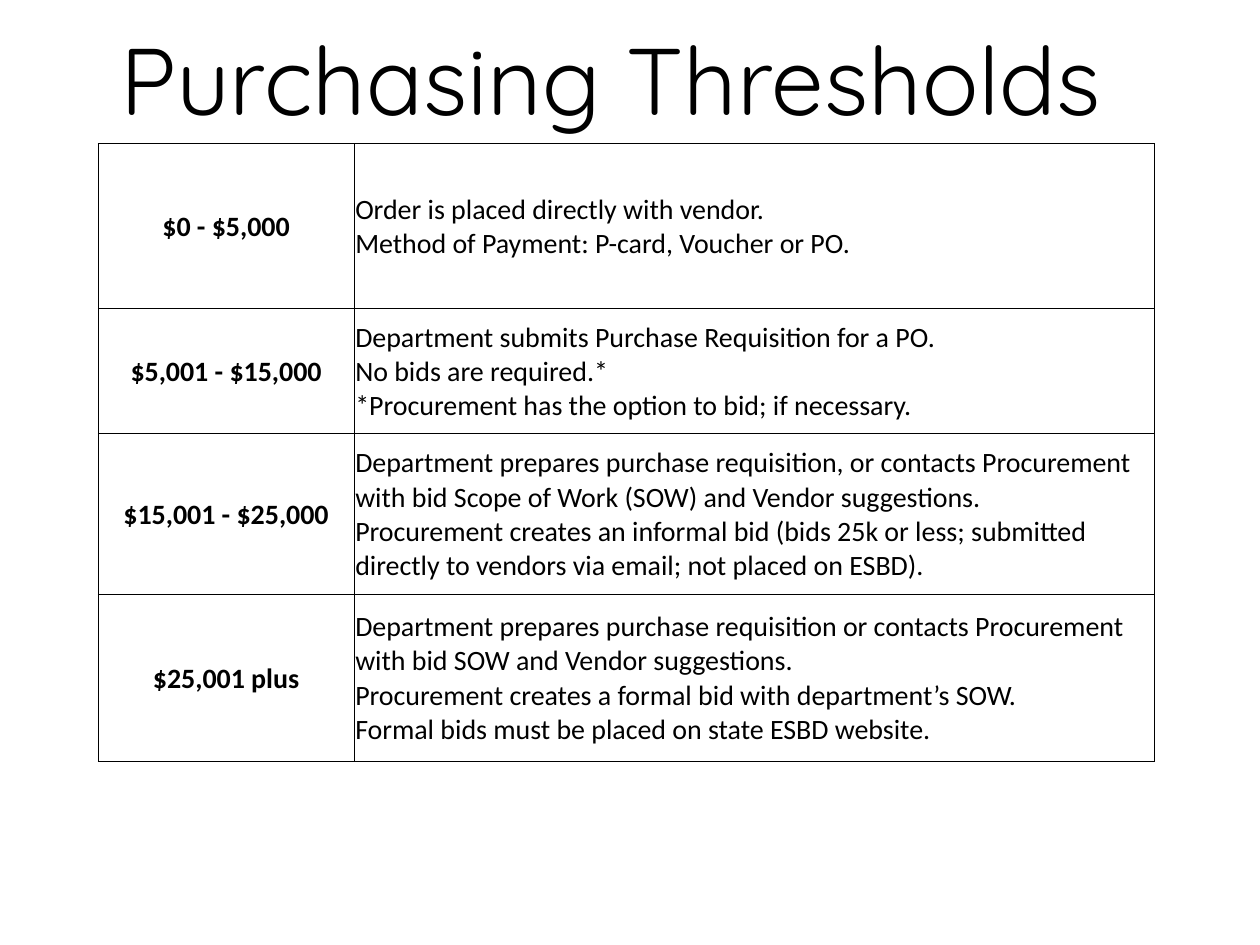
import pptx
import pptx.dml.color
import pptx.enum.text
import pptx.util
from lxml import etree
from pptx.oxml.ns import qn

Inches, Pt = pptx.util.Inches, pptx.util.Pt
PP_ALIGN, ANCHOR = pptx.enum.text.PP_ALIGN, pptx.enum.text.MSO_ANCHOR

# Content: purchase amount, then the steps that apply to it
TITLE = "Purchasing Thresholds"
THRESHOLDS = [
    ("$0 - $5,000", [
        "Order is placed directly with vendor.",
        "Method of Payment: P-card, Voucher or PO.",
    ]),
    ("$5,001 - $15,000", [
        "Department submits Purchase Requisition for a PO.",
        "No bids are required.*",
        "*Procurement has the option to bid; if necessary.",
    ]),
    ("$15,001 - $25,000", [
        "Department prepares purchase requisition, or contacts Procurement "
        "with bid Scope of Work (SOW) and Vendor suggestions.",
        "Procurement creates an informal bid (bids 25k or less; submitted "
        "directly to vendors via email; not placed on ESBD).",
    ]),
    ("$25,001 plus", [
        "Department prepares purchase requisition or contacts Procurement "
        "with bid SOW and Vendor suggestions.",
        "Procurement creates a formal bid with department’s SOW.",
        "Formal bids must be placed on state ESBD website.",
    ]),
]

# Layout and style
SLIDE_SIZE = (10, 7.5)
TITLE_BOX = (0.42, 0.26, 8.85, 0.87)
TABLE_LEFT, TABLE_TOP = 0.78, 1.14
COLUMN_WIDTHS = (2.03, 6.35)
ROW_HEIGHTS = (1.31, 0.99, 1.28, 1.32)
BLACK = pptx.dml.color.RGBColor(0x00, 0x00, 0x00)
BORDER_WIDTH = Pt(0.5)


def style_paragraph(paragraph, font_name, size, bold, alignment):
    paragraph.alignment = alignment
    paragraph.font.name = font_name
    paragraph.font.size = Pt(size)
    paragraph.font.bold = bold
    paragraph.font.color.rgb = BLACK


def add_borders(cell):
    properties = cell._tc.get_or_add_tcPr()
    for side in ("lnL", "lnR", "lnT", "lnB"):
        line = etree.SubElement(properties, qn(f"a:{side}"), w=str(BORDER_WIDTH))
        fill = etree.SubElement(line, qn("a:solidFill"))
        etree.SubElement(fill, qn("a:srgbClr"), val=str(BLACK))


def fill_cell(cell, lines, bold, alignment):
    cell.margin_left = cell.margin_right = cell.margin_top = Inches(0.01)
    cell.margin_bottom = 0
    cell.vertical_anchor = ANCHOR.MIDDLE
    add_borders(cell)
    cell.fill.background()
    cell.text_frame.text = "\n".join(lines)
    for paragraph in cell.text_frame.paragraphs:
        style_paragraph(paragraph, "Calibri", 16, bold, alignment)


def main():
    deck = pptx.Presentation()
    deck.slide_width, deck.slide_height = map(Inches, SLIDE_SIZE)
    slide = deck.slides.add_slide(deck.slide_layouts.get_by_name("Title Only"))

    # Title
    title = slide.shapes.title
    title.left, title.top, title.width, title.height = map(Inches, TITLE_BOX)
    title.text_frame.text = TITLE
    title.text_frame.auto_size = pptx.enum.text.MSO_AUTO_SIZE.NONE
    title.text_frame.vertical_anchor = ANCHOR.BOTTOM
    heading = title.text_frame.paragraphs[0]
    heading.line_spacing = 0.9
    style_paragraph(heading, "Quicksand", 54, False, PP_ALIGN.CENTER)

    # Threshold table
    table = slide.shapes.add_table(
        len(THRESHOLDS), len(COLUMN_WIDTHS),
        Inches(TABLE_LEFT), Inches(TABLE_TOP),
        Inches(sum(COLUMN_WIDTHS)), Inches(sum(ROW_HEIGHTS))).table
    table.first_row = table.horz_banding = False
    for column, width in zip(table.columns, COLUMN_WIDTHS):
        column.width = Inches(width)
    for row, height, (amount, steps) in zip(table.rows, ROW_HEIGHTS, THRESHOLDS):
        row.height = Inches(height)
        fill_cell(row.cells[0], [amount], True, PP_ALIGN.CENTER)
        fill_cell(row.cells[1], steps, False, PP_ALIGN.LEFT)

    deck.save("out.pptx")


if __name__ == "__main__":
    main()
